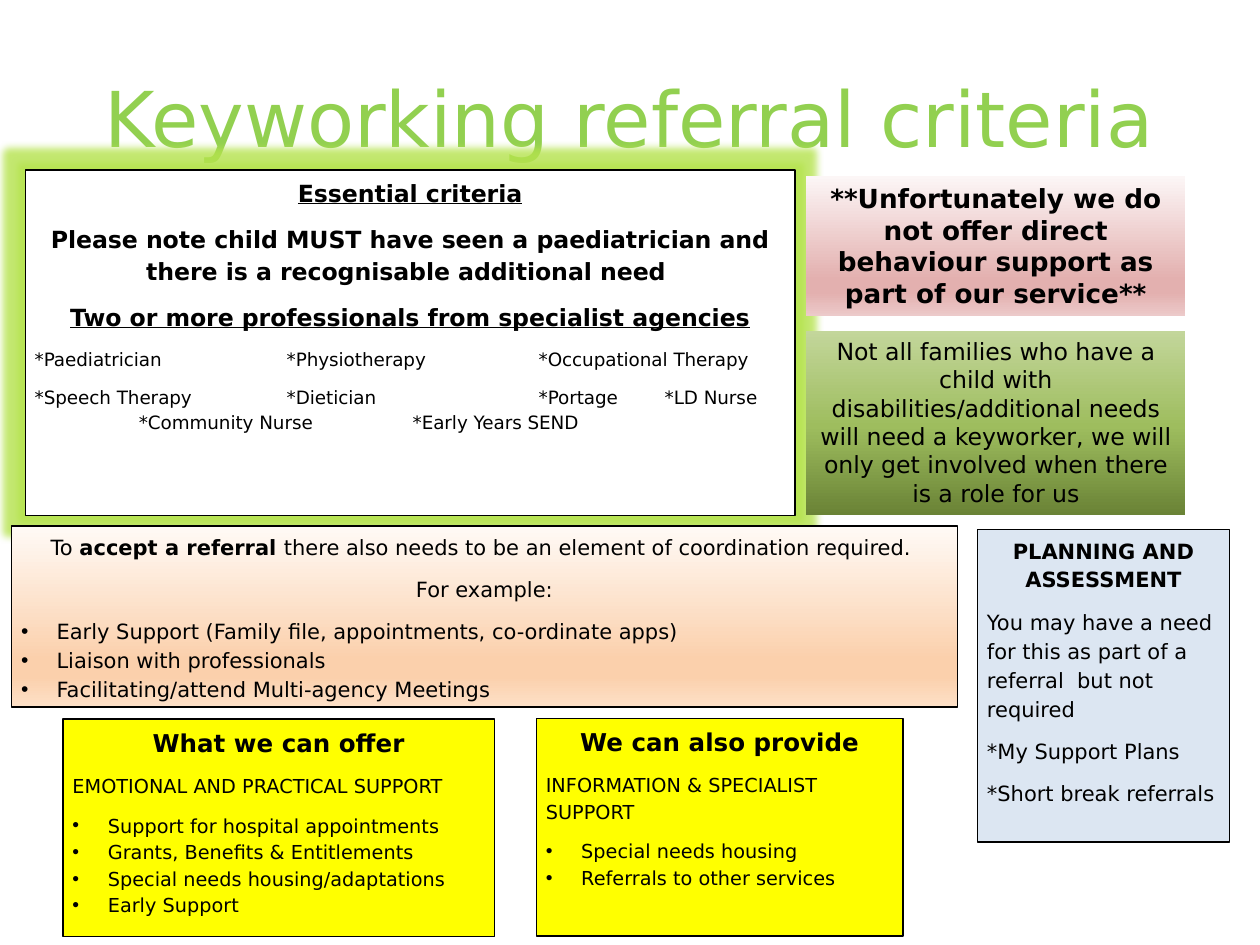
from lxml import etree
from pptx import Presentation
from pptx.dml.color import RGBColor
from pptx.enum.shapes import MSO_SHAPE
from pptx.enum.text import MSO_ANCHOR, PP_ALIGN
from pptx.oxml import parse_xml
from pptx.oxml.ns import qn
from pptx.util import Pt

RECTANGLE = MSO_SHAPE.RECTANGLE
TOP, MIDDLE = MSO_ANCHOR.TOP, MSO_ANCHOR.MIDDLE
LEFT, CENTER = PP_ALIGN.LEFT, PP_ALIGN.CENTER
FONT = "DejaVu Sans"
NAMESPACE = "http://schemas.openxmlformats.org/drawingml/2006/main"
TIGHT, NORMAL = (5.4, 2.7), (7.2, 3.6)
INDENT = 20.25


# Paragraphs: text is a string or a list of (text, bold) spans
def line(text, size, after=7.5, spacing=1.15, **style):
    return dict(text=text, size=size, after=after, spacing=spacing, **style)


def heading(text, size, **style):
    return line(text, size, bold=True, align=CENTER, **style)


def bullets(texts, size):
    return [line(text, size, after=0, bullet=True) for text in texts]


TITLE = line("Keyworking referral criteria", 44, after=0, spacing=1,
             align=CENTER, color="92D050")

ESSENTIAL = [
    heading("Essential criteria", 13.5, underline=True),
    heading("Please note child MUST have seen a paediatrician and there is "
            "a recognisable additional need ", 13.5),
    heading("Two or more professionals from specialist agencies", 13.5, underline=True),
    line("*Paediatrician\t*Physiotherapy\t*Occupational Therapy", 10.5, tabs=[144, 288]),
    line("*Speech Therapy\t*Dietician\t*Portage\t*LD Nurse", 10.5, after=0,
         tabs=[144, 288, 360]),
    line("\t*Community Nurse\t*Early Years SEND", 10.5, tabs=[59.5, 216]),
]
BEHAVIOUR = [heading("**Unfortunately we do not offer direct behaviour support as "
                     "part of our service**", 15, after=0, spacing=1)]
PLANNING = [
    heading("PLANNING AND ASSESSMENT", 12),
    line("You may have a need for this as part of a referral  but not required", 12),
    line("*My Support Plans", 12),
    line("*Short break referrals", 12),
]
REFERRAL = [
    line([("To ", False), ("accept a referral ", True),
          ("there also needs to be an element of coordination required. ", False)],
         12, align=CENTER),
    line("For example:", 12, align=CENTER),
    *bullets(["Early Support (Family file, appointments, co-ordinate apps)",
              "Liaison with professionals",
              "Facilitating/attend Multi-agency Meetings"], 12),
]
FAMILIES = [line("Not all families who have a child with disabilities/additional needs "
                 "will need a keyworker, we will only get involved when there is a role "
                 "for us", 13.5, after=0, spacing=1, align=CENTER)]
OFFER = [
    heading("What we can offer", 14),
    line("EMOTIONAL AND PRACTICAL SUPPORT", 11),
    *bullets(["Support for hospital appointments", "Grants, Benefits & Entitlements",
              "Special needs housing/adaptations", "Early Support"], 11),
]
PROVIDE = [
    heading("We can also provide", 14),
    line("INFORMATION & SPECIALIST SUPPORT", 11),
    *bullets(["Special needs housing", "Referrals to other services"], 11),
]

# Gradients run from top to bottom: (percent, colour)
RED = [(0, "FCF6F6"), (74, "E3B0AF"), (83, "E3B0AF"), (100, "ECCACA")]
ORANGE = [(0, "FFFAF6"), (74, "FBD0AC"), (83, "FBD0AC"), (100, "FDE0C7")]
GREEN = [(0, "C3D69B"), (52, "9EBD5E"), (100, "6A8336")]

# (left, top, width, height), fill, outlined, insets, glow colour, paragraphs
PANELS = [
    ((14.4, 97.2, 439.9, 197.2), "FFFFFF", True, TIGHT, "B5E34D", ESSENTIAL),
    ((460.7, 100.8, 216.8, 79.9), RED, False, NORMAL, None, BEHAVIOUR),
    ((558.6, 302.6, 144, 178.5), "DCE6F2", True, TIGHT, None, PLANNING),
    ((6.7, 300.5, 540.3, 103.6), ORANGE, True, TIGHT, None, REFERRAL),
    ((460.7, 189, 216.8, 105.1), GREEN, False, NORMAL, None, FAMILIES),
    ((36, 410.9, 246.5, 124.4), "FFFF00", True, TIGHT, None, OFFER),
    ((306.5, 410.4, 209.6, 124.4), "FFFF00", True, TIGHT, None, PROVIDE),
]


def rgb(color):
    return RGBColor.from_string(color)


def set_gradient(shape, stops):
    marks = "".join(f'<a:gs pos="{percent * 1000}"><a:srgbClr val="{color}"/></a:gs>'
                    for percent, color in stops)
    shape._element.spPr.find(qn("a:prstGeom")).addnext(parse_xml(
        f'<a:gradFill xmlns:a="{NAMESPACE}" rotWithShape="1"><a:gsLst>{marks}</a:gsLst>'
        '<a:lin ang="5400000" scaled="0"/></a:gradFill>'))


def add_glow(shape, color):
    effects = shape._element.spPr.find(qn("a:effectLst"))
    effects.append(parse_xml(
        f'<a:glow xmlns:a="{NAMESPACE}" rad="{Pt(8)}"><a:srgbClr val="{color}">'
        '<a:alpha val="80000"/></a:srgbClr></a:glow>'))


def write_paragraph(para, item):
    para.alignment = item.get("align", LEFT)
    para.line_spacing = item["spacing"]
    para.space_after = Pt(item["after"])
    para.font.name, para.font.size = FONT, Pt(item["size"])
    para.font.color.rgb = rgb(item.get("color", "000000"))
    para.font.bold = item.get("bold", False)
    para.font.underline = item.get("underline", False)
    if isinstance(item["text"], str):
        para.add_run().text = item["text"]
    else:
        for text, bold in item["text"]:
            span = para.add_run()
            span.text, span.font.bold = text, bold

    # Bullets and tab stops come before the paragraph's default font
    properties = para._p.get_or_add_pPr()
    extras = []
    if item.get("bullet"):
        properties.set("marL", str(Pt(INDENT)))
        properties.set("indent", str(-Pt(INDENT)))
        extras.append(etree.Element(qn("a:buFont"), typeface="Arial"))
        extras.append(etree.Element(qn("a:buChar"), char="•"))
    if "tabs" in item:
        stops = etree.Element(qn("a:tabLst"))
        for position in item["tabs"]:
            etree.SubElement(stops, qn("a:tab"), pos=str(Pt(position)), algn="l")
        extras.append(stops)
    for extra in extras:
        properties.find(qn("a:defRPr")).addprevious(extra)


def write_text(shape, items, insets, anchor):
    frame = shape.text_frame
    frame.word_wrap, frame.vertical_anchor = True, anchor
    frame.margin_left = frame.margin_right = Pt(insets[0])
    frame.margin_top = frame.margin_bottom = Pt(insets[1])
    for index, item in enumerate(items):
        para = frame.add_paragraph() if index else frame.paragraphs[0]
        write_paragraph(para, item)


def add_panel(page, place, fill, outlined, insets, glow, items):
    box = page.shapes.add_shape(RECTANGLE, *map(Pt, place))
    box.shadow.inherit = False
    if isinstance(fill, str):
        box.fill.solid()
        box.fill.fore_color.rgb = rgb(fill)
    else:
        set_gradient(box, fill)
    if outlined:
        box.line.color.rgb = rgb("000000")
        box.line.width = Pt(0.75)
    else:
        box.line.fill.background()
    if glow:
        add_glow(box, glow)
    write_text(box, items, insets, TOP)


def main():
    deck = Presentation()
    deck.slide_width, deck.slide_height = Pt(720), Pt(540)
    page = deck.slides.add_slide(deck.slide_layouts[6])
    title = page.shapes.add_textbox(Pt(36), Pt(21.6), Pt(648), Pt(90))
    write_text(title, [TITLE], NORMAL, MIDDLE)
    for panel in PANELS:
        add_panel(page, *panel)
    deck.save("out.pptx")


if __name__ == "__main__":
    main()
